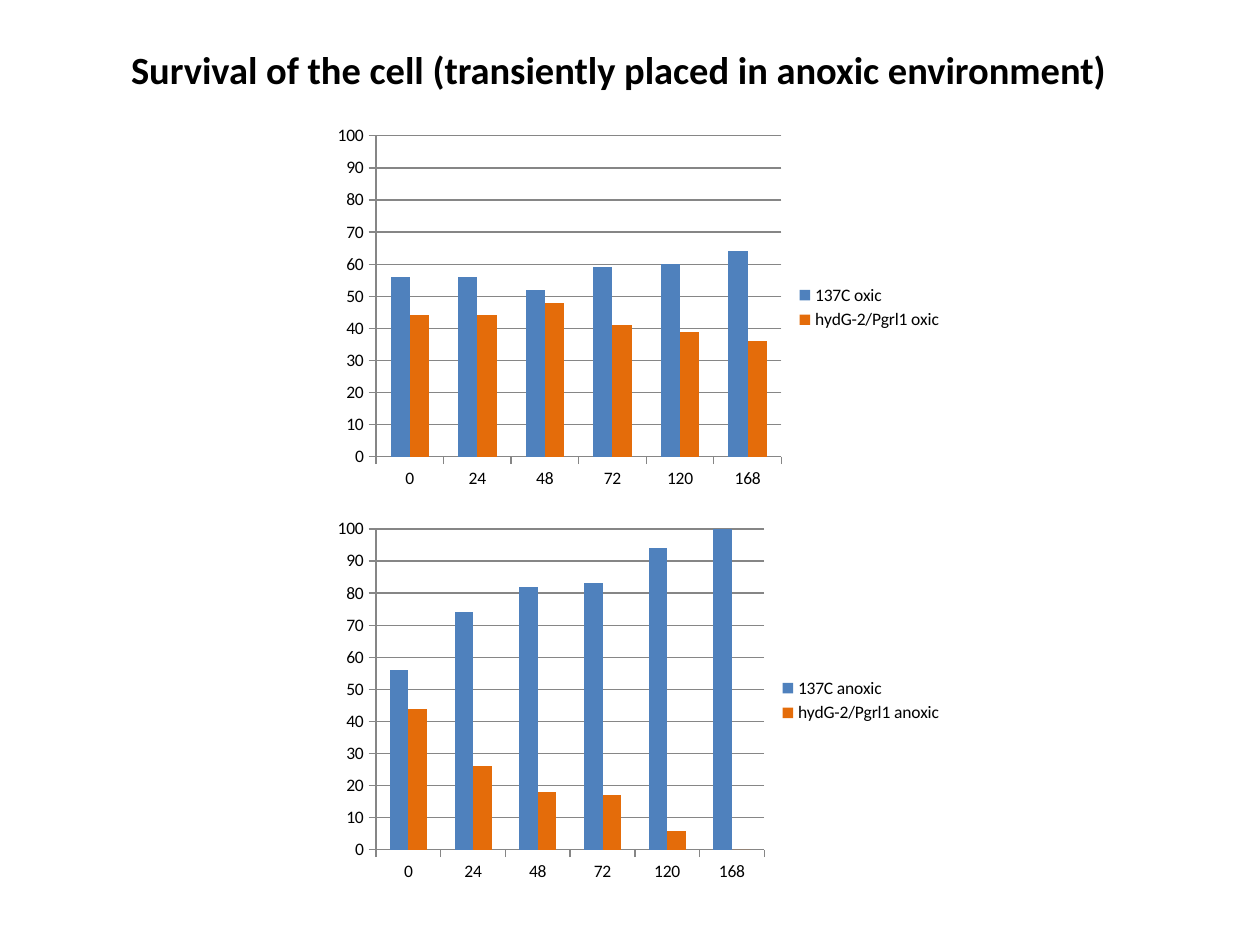
"""Build a slide with two clustered column charts of cell survival."""
import pptx
import pptx.chart.data
import pptx.dml.color
import pptx.enum.chart
import pptx.enum.text
import pptx.util
from pptx.util import Inches

COLORS = {"text": "000000", "axis": "868686", "wild": "4F81BD", "mutant": "E46C0A"}
FONT = "Calibri"
HOURS = ["0", "24", "48", "72", "120", "168"]
CHARTS = [
    ("oxic", [56, 56, 52, 59, 60, 64], [44, 44, 48, 41, 39, 36]),
    ("anoxic", [56, 74, 82, 83, 94, 100], [44, 26, 18, 17, 6, 0]),
]


def rgb(name):
    """Return the named colour."""
    return pptx.dml.color.RGBColor.from_string(COLORS[name])


def style_font(font, size, bold=False):
    """Set the face, size, weight and colour of a font."""
    font.name = FONT
    font.size = pptx.util.Pt(size)
    font.bold = bold
    font.color.rgb = rgb("text")


def style_line(line):
    """Give a chart line the thin grey of the axes."""
    line.color.rgb = rgb("axis")
    line.width = pptx.util.Pt(0.75)


def set_title(s, text):
    """Place and format the slide title."""
    sp = s.shapes.title
    sp.left, sp.top = Inches(0.94), Inches(0.31)
    sp.width, sp.height = Inches(8.03), Inches(0.47)
    tf = sp.text_frame
    tf.text = text
    tf.word_wrap = False
    tf.auto_size = pptx.enum.text.MSO_AUTO_SIZE.NONE
    tf.vertical_anchor = pptx.enum.text.MSO_ANCHOR.MIDDLE
    p = tf.paragraphs[0]
    p.alignment = pptx.enum.text.PP_ALIGN.LEFT
    style_font(p.runs[0].font, 22, bold=True)


def add_survival_chart(s, top, condition, wild, mutant):
    """Add the column chart for one growth condition."""
    data = pptx.chart.data.CategoryChartData()
    data.categories = HOURS
    data.add_series(f"137C {condition}", wild)
    data.add_series(f"hydG-2/Pgrl1 {condition}", mutant)
    chart = s.shapes.add_chart(
        pptx.enum.chart.XL_CHART_TYPE.COLUMN_CLUSTERED,
        Inches(2.58), top, Inches(5), Inches(3), data,
    ).chart
    style_font(chart.font, 10)
    chart.has_title = False
    chart.has_legend = True
    chart.legend.position = pptx.enum.chart.XL_LEGEND_POSITION.RIGHT
    chart.legend.include_in_layout = False

    for axis in (chart.category_axis, chart.value_axis):
        axis.major_tick_mark = pptx.enum.chart.XL_TICK_MARK.OUTSIDE
        style_line(axis.format.line)
    chart.value_axis.minimum_scale = 0
    chart.value_axis.maximum_scale = 100
    chart.value_axis.major_unit = 10
    style_line(chart.value_axis.major_gridlines.format.line)

    plot = chart.plots[0]
    plot.gap_width = 150
    plot.overlap = 0
    plot.vary_by_categories = False
    for series, color in zip(plot.series, ("wild", "mutant")):
        series.format.fill.solid()
        series.format.fill.fore_color.rgb = rgb(color)


def main():
    """Build and save the slide."""
    prs = pptx.Presentation()
    prs.slide_width, prs.slide_height = Inches(10), Inches(7.5)
    s = prs.slides.add_slide(prs.slide_layouts[5])
    set_title(s, "Survival of the cell (transiently placed in anoxic environment)")
    for i, (condition, wild, mutant) in enumerate(CHARTS):
        add_survival_chart(s, Inches(0.94 + 3.12 * i), condition, wild, mutant)
    prs.save("out.pptx")


if __name__ == "__main__":
    main()
